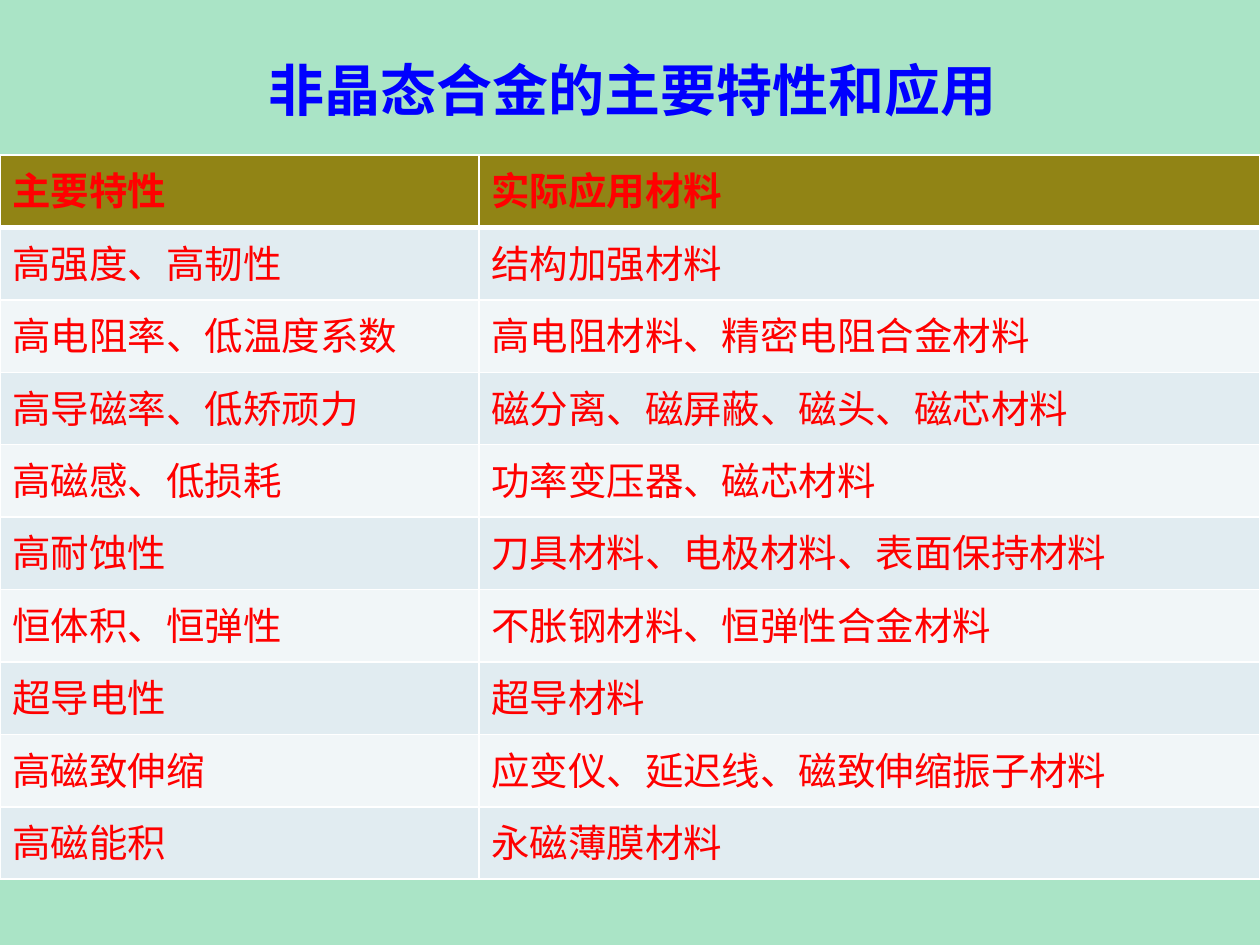
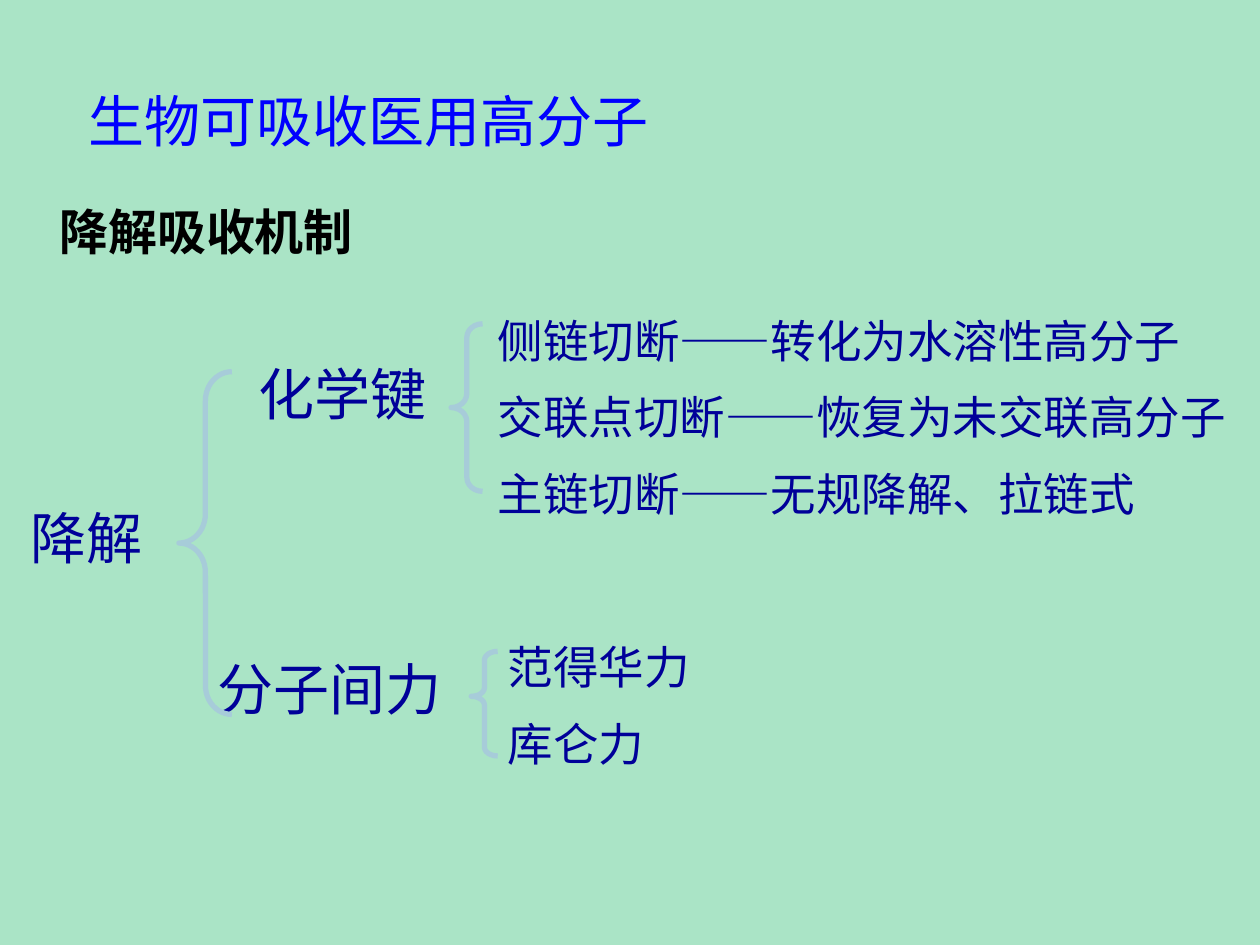
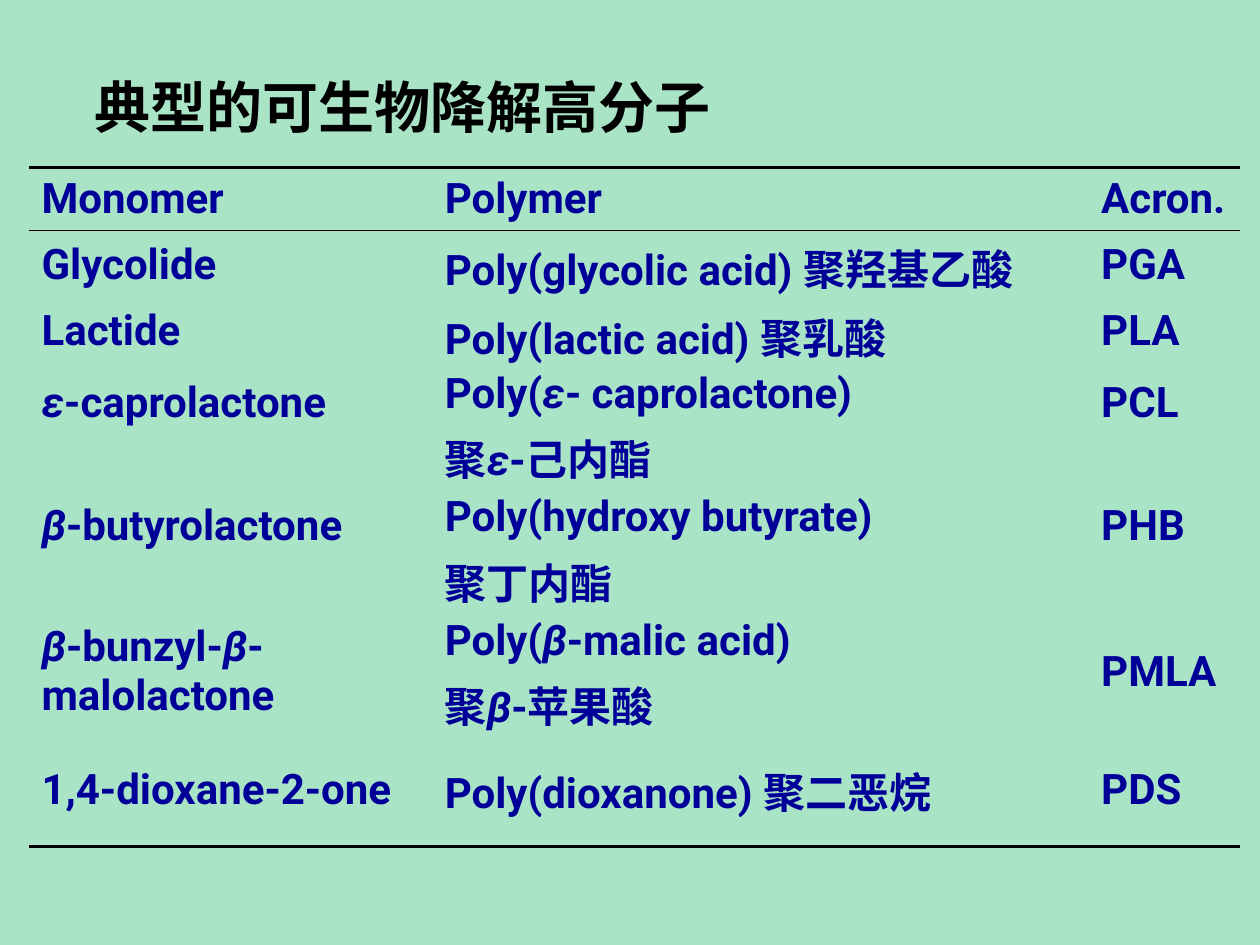
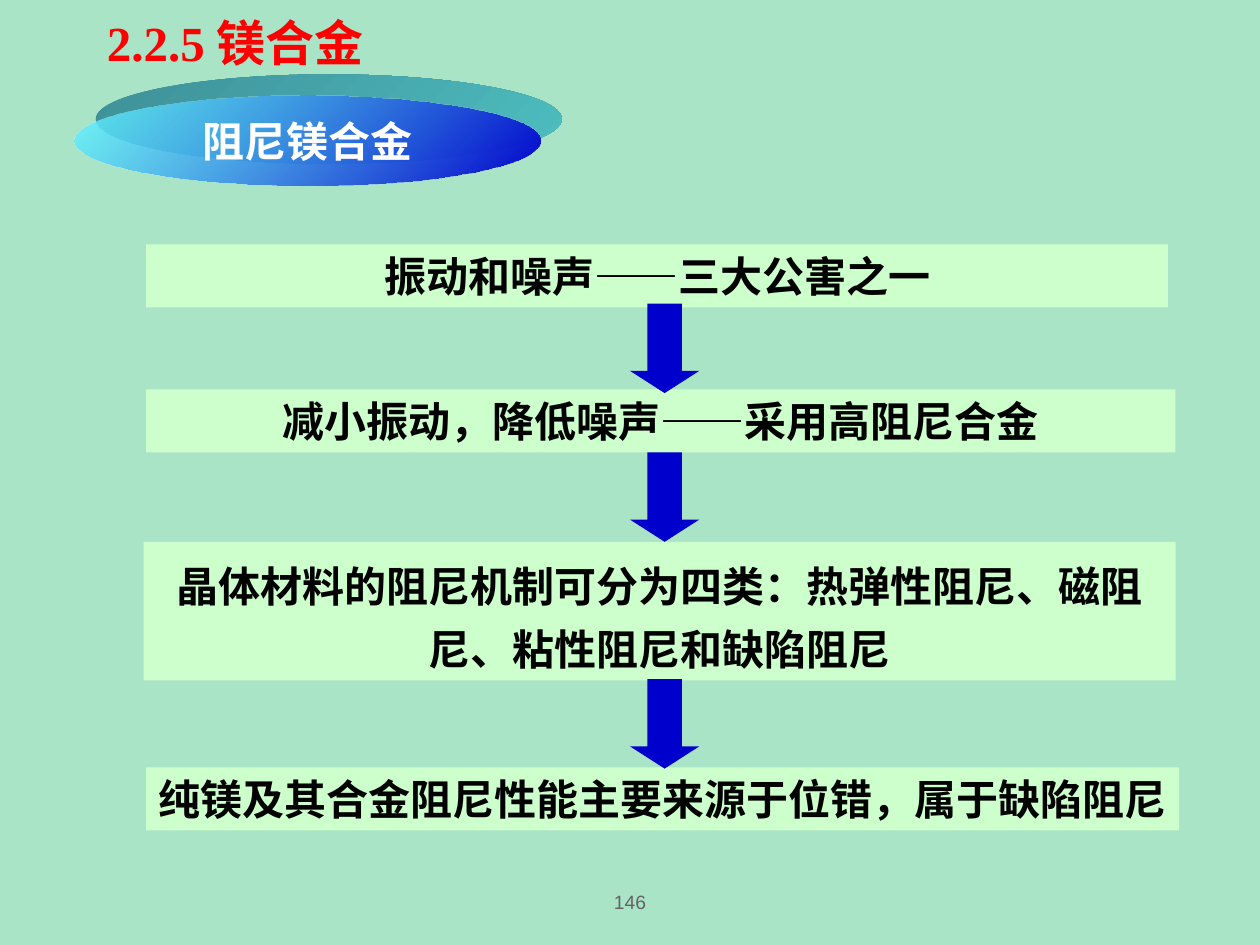
from itertools import groupby, pairwise

from lxml.etree import SubElement
from pptx import Presentation
from pptx.dml.color import RGBColor
from pptx.enum.shapes import MSO_SHAPE as SHAPE
from pptx.enum.text import MSO_ANCHOR as ANCHOR, PP_ALIGN as ALIGN
from pptx.oxml.ns import qn
from pptx.util import Inches, Pt

# Shared look
MINT, PALE_GREEN, OLIVE = "AAE4C6", "CCFFCC", "918415"
BLUE, NAVY, DEEP_BLUE = "0000FF", "000099", "0000CC"
RED, BLACK, WHITE, GREY = "FF0000", "000000", "FFFFFF", "636363"
BANDS = ("E1ECF1", "F1F6F8")
BRACE = "A7CCD9"
SERIF, SANS, HAND, TABLE_FONT = "Times New Roman", "Arial", "Comic Neue", "Roboto"

PROPERTIES = [
    ("主要特性", "实际应用材料"),
    ("高强度、高韧性", "结构加强材料"),
    ("高电阻率、低温度系数", "高电阻材料、精密电阻合金材料"),
    ("高导磁率、低矫顽力", "磁分离、磁屏蔽、磁头、磁芯材料"),
    ("高磁感、低损耗", "功率变压器、磁芯材料"),
    ("高耐蚀性", "刀具材料、电极材料、表面保持材料"),
    ("恒体积、恒弹性", "不胀钢材料、恒弹性合金材料"),
    ("超导电性", "超导材料"),
    ("高磁致伸缩", "应变仪、延迟线、磁致伸缩振子材料"),
    ("高磁能积", "永磁薄膜材料"),
]
POLYMERS = [
    ("Monomer", "Polymer", "Acron."),
    ("Glycolide", "Poly(glycolic acid) 聚羟基乙酸", "PGA"),
    ("Lactide", "Poly(lactic acid) 聚乳酸", "PLA"),
    ("ε-caprolactone", "Poly(ε- caprolactone)\n聚ε-己内酯", "PCL"),
    ("β-butyrolactone", "Poly(hydroxy butyrate)\n聚丁内酯", "PHB"),
    ("β-bunzyl-β-malolactone", "Poly(β-malic acid)\n聚β-苹果酸", "PMLA"),
    ("1,4-dioxane-2-one", "Poly(dioxanone) 聚二恶烷", "PDS"),
]


def color(hex_string):
    return RGBColor.from_string(hex_string)


def grid(*cells):
    """Lengths on a grid of 100 columns by 75 rows, each 0.1 inch."""
    return [Inches(n / 10) for n in cells]


def write(tf, text, size, font, ink, bold=False, align=ALIGN.LEFT,
          spacing=None, gap=None):
    """One paragraph a line; Greek prefixes are set in italics."""
    for i, line in enumerate(text.split("\n")):
        p = tf.add_paragraph() if i else tf.paragraphs[0]
        p.alignment, p.line_spacing = align, spacing
        if i and gap:
            p.space_before = Pt(gap)
        p.font.size, p.font.name, p.font.bold = Pt(size), font, bold
        p.font.color.rgb = color(ink)
        for greek, letters in groupby(line, lambda ch: ch in "εβ"):
            r = p.add_run()
            r.text = "".join(letters)
            if greek:
                r.font.italic = True


def set_margins(tf, margin):
    tf.margin_left = tf.margin_right = tf.margin_top = tf.margin_bottom = margin


def add_text(slide, box, text, *style, margin=None, anchor=ANCHOR.TOP, **options):
    tf = slide.shapes.add_textbox(*grid(*box)).text_frame
    tf.word_wrap, tf.vertical_anchor = True, anchor
    if margin is not None:
        set_margins(tf, Inches(margin))
    write(tf, text, *style, **options)


def add_spaced(slide, box, text, size, ink=NAVY, bold=False):
    """Text without margins and with wide line spacing."""
    add_text(slide, box, text, size, HAND, ink, bold, margin=0, spacing=1.4)


def add_shape(slide, kind, box, fill=None, adjust=()):
    sp = slide.shapes.add_shape(kind, *grid(*box))
    sp.shadow.inherit = False
    sp.line.fill.background()
    if fill:
        sp.fill.solid()
        sp.fill.fore_color.rgb = color(fill)
    else:
        sp.fill.background()
    for i, value in enumerate(adjust):
        sp.adjustments[i] = value
    return sp


def add_brace(slide, box, *adjust):
    sp = add_shape(slide, SHAPE.LEFT_BRACE, box, adjust=adjust)
    sp.line.color.rgb = color(BRACE)
    sp.line.width = Pt(3)


def add_gradient_ellipse(slide, box, start, end, opacity=100):
    sp = add_shape(slide, SHAPE.OVAL, box)
    sp.fill.gradient()
    sp.fill.gradient_angle = 315
    for stop, ink in zip(sp.fill.gradient_stops, (start, end)):
        stop.color.rgb = color(ink)
    first = next(sp._element.spPr.iter(qn("a:srgbClr")))
    SubElement(first, qn("a:alpha"), val=str(opacity * 1000))
    return sp


def set_borders(cell, ink, **widths):
    """Draw the sides named L, R, T, B; the others get no line."""
    tc_pr = cell._tc.get_or_add_tcPr()
    for i, side in enumerate("LRTB"):
        width = widths.get(side, 0)
        ln = SubElement(tc_pr, qn(f"a:ln{side}"), w=str(Pt(width)))
        if width:
            fill = SubElement(ln, qn("a:solidFill"))
            SubElement(fill, qn("a:srgbClr"), val=ink)
        else:
            SubElement(ln, qn("a:noFill"))
        tc_pr.insert(i, ln)


def add_table(slide, left, top, columns, rows, data):
    """Plain table; returns its cells with their row and column."""
    frame = slide.shapes.add_table(len(rows), len(columns),
                                   *grid(left, top, sum(columns), sum(rows)))
    table = frame.table
    table.first_row = table.horz_banding = False
    for lines, lengths, name in ((table.columns, columns, "width"),
                                 (table.rows, rows, "height")):
        for line, length in zip(lines, grid(*lengths)):
            setattr(line, name, length)
    return [(r, table.cell(r, c), text)
            for r, row in enumerate(data) for c, text in enumerate(row)]


def properties_slide(slide):
    add_text(slide, (8.6, 3.9, 83.3, 6.3), "非晶态合金的主要特性和应用",
             32, SERIF, BLUE, True, align=ALIGN.CENTER)
    rows = [5.75] * len(PROPERTIES)
    for r, cell, text in add_table(slide, 0, 12.3, (38, 62), rows, PROPERTIES):
        header = r == 0
        cell.fill.solid()
        cell.fill.fore_color.rgb = color(OLIVE if header else BANDS[(r - 1) % 2])
        write(cell.text_frame, text, 22, TABLE_FONT, RED, header)
        set_borders(cell, WHITE, L=1, R=1, T=3 if r == 1 else 1, B=3 if header else 1)


def degradation_slide(slide):
    add_spaced(slide, (7, 4.7, 81, 6.7), "生物可吸收医用高分子", 32, BLUE)
    add_spaced(slide, (4.7, 14.1, 76.5, 6.5), "降解吸收机制", 28, BLACK, True)
    # Tree, from root to leaves
    add_spaced(slide, (2.4, 37.8, 12.5, 7.5), "降解", 32)
    add_spaced(slide, (20.5, 26.4, 14.2, 7.5), "化学键", 32)
    add_spaced(slide, (17.3, 49.8, 19.8, 7.5), "分子间力", 32)
    add_spaced(slide, (39.5, 23.1, 62.5, 18.2),
               "侧链切断——转化为水溶性高分子\n"
               "交联点切断——恢复为未交联高分子\n"
               "主链切断——无规降解、拉链式", 26)
    add_spaced(slide, (40.3, 49, 20, 12.2), "范得华力\n库仑力", 26)
    add_brace(slide, (14.2, 29.5, 4.2, 27.2), 0.55, 0.5)
    add_brace(slide, (35.8, 25.7, 2.5, 13.3), 0.44, 0.5)
    add_brace(slide, (37.4, 51.7, 2.1, 8.3), 0.33, 0.43)


def polymers_slide(slide):
    add_text(slide, (7.5, 3.6, 85, 6.7), "典型的可生物降解高分子",
             32, HAND, BLACK, True, margin=0, spacing=1.4)
    rows = (5, 5.5, 5, 9.8, 9.8, 9.8, 9)
    last = len(rows) - 1
    rules = {0: {"T": 2.25, "B": 1}, 1: {"T": 1}, last: {"B": 2.25}}
    for r, cell, text in add_table(slide, 2.3, 13.3, (32, 52.1, 12), rows, POLYMERS):
        cell.fill.background()
        cell.vertical_anchor = ANCHOR.MIDDLE
        if r in (3, 4) and "\n" not in text:  # level with the first line beside
            cell.vertical_anchor = ANCHOR.TOP
            cell.margin_top = Inches(0.12)
        write(cell.text_frame, text, 24, TABLE_FONT, NAVY, True, gap=4.8)
        set_borders(cell, BLACK, **rules.get(r, {}))


def damping_slide(slide):
    add_text(slide, (7.5, 0.5, 46.5, 5.7), "2.2.5 镁合金", 28, SERIF, RED, True)
    # Raised ellipse: the rear face sits up and to the right
    left, top, width, height = 5.9, 7.6, 37, 7.1
    depth = 1.7
    add_gradient_ellipse(slide, (left + depth, top - depth, width, height),
                         "3F9098", "4DBEC0")
    sp = add_gradient_ellipse(slide, (left, top, width, height),
                              "66FFFF", DEEP_BLUE, 80)
    sp.text_frame.word_wrap = False
    write(sp.text_frame, "阻尼镁合金", 24, SANS, WHITE, True, ALIGN.CENTER)
    # Chain of statements
    steps = [
        ((11.6, 19.4, 81.1, 5), "振动和噪声——三大公害之一", None),
        ((11.6, 30.9, 81.7, 5), "减小振动，降低噪声——采用高阻尼合金", None),
        ((11.4, 43, 81.9, 11),
         "晶体材料的阻尼机制可分为四类：热弹性阻尼、磁阻尼、粘性阻尼和缺陷阻尼", 1.25),
        ((11.6, 60.9, 82, 5), "纯镁及其合金阻尼性能主要来源于位错，属于缺陷阻尼", None),
    ]
    for box, text, spacing in steps:
        tf = add_shape(slide, SHAPE.RECTANGLE, box, PALE_GREEN).text_frame
        tf.word_wrap, tf.vertical_anchor = True, ANCHOR.TOP
        write(tf, text, 24, SERIF, BLACK, True, ALIGN.CENTER, spacing)
    # Each arrow is centred in the gap between two boxes
    arrow_height = 7.1
    for (upper, *_), (lower, *_) in pairwise(steps):
        middle = (upper[1] + upper[3] + lower[1]) / 2
        add_shape(slide, SHAPE.DOWN_ARROW,
                  (50, middle - arrow_height / 2, 5.5, arrow_height),
                  DEEP_BLUE, (0.5, 0.32))
    add_text(slide, (45, 70, 10, 3.1), "146", 11, SANS, GREY,
             margin=0.05, anchor=ANCHOR.MIDDLE, align=ALIGN.CENTER)


def main():
    prs = Presentation()
    prs.slide_width, prs.slide_height = grid(100, 75)
    background = prs.slide_master.background.fill
    background.solid()
    background.fore_color.rgb = color(MINT)
    for build in (properties_slide, degradation_slide, polymers_slide, damping_slide):
        build(prs.slides.add_slide(prs.slide_layouts[6]))
    prs.save("out.pptx")


if __name__ == "__main__":
    main()
